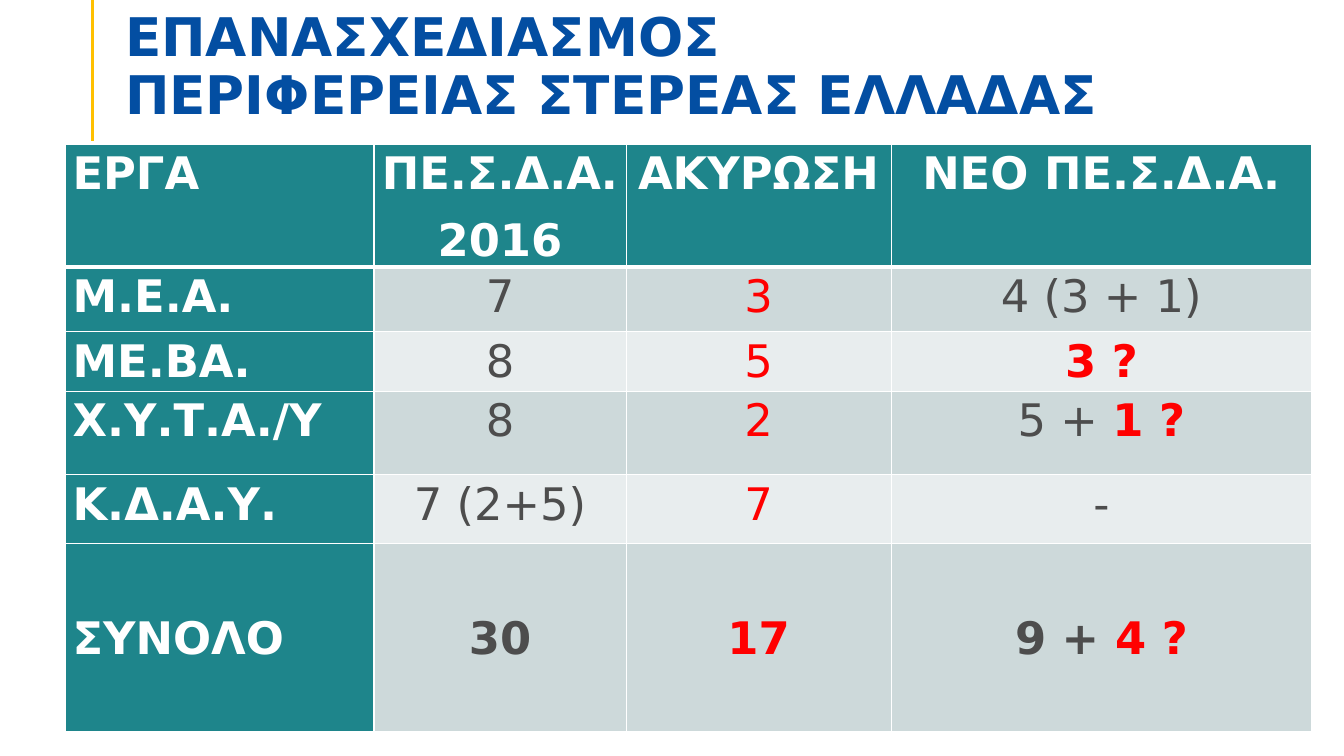
from lxml import etree
from pptx import Presentation
from pptx.dml.color import RGBColor
from pptx.enum.shapes import MSO_CONNECTOR
from pptx.enum.text import MSO_ANCHOR, MSO_AUTO_SIZE, PP_ALIGN
from pptx.oxml.ns import qn
from pptx.util import Inches, Pt

STRAIGHT = MSO_CONNECTOR.STRAIGHT
TOP, MIDDLE, BOTTOM = MSO_ANCHOR.TOP, MSO_ANCHOR.MIDDLE, MSO_ANCHOR.BOTTOM
LEFT, CENTER = PP_ALIGN.LEFT, PP_ALIGN.CENTER
NO_AUTOFIT = MSO_AUTO_SIZE.NONE

FONT = "DejaVu Sans"
COLORS = {
    "title": "034EA2", "accent": "FFC000", "teal": "1E858B",
    "band_dark": "CDD9DA", "band_light": "E8EDEE",
    "white": "FFFFFF", "grey": "4D4D4D", "red": "FF0000",
}
# Run styles: colour and bold
STYLES = {
    "head": ("white", True),
    "plain": ("grey", False), "total": ("grey", True),
    "cut": ("red", False), "open": ("red", True),
}

COL_WIDTHS = [3.06, 2.5, 2.63, 4.17]
ROW_HEIGHTS = [1.19, 0.64, 0.59, 0.83, 0.68, 1.87]
HEADERS = ["ΕΡΓΑ", "ΠΕ.Σ.Δ.Α.\n2016", "ΑΚΥΡΩΣΗ", "ΝΕΟ ΠΕ.Σ.Δ.Α."]
# Label, then one list of (text, style) runs for each value column
PROJECTS = [
    ("Μ.Ε.Α.", [("7", "plain")], [("3", "cut")], [("4 (3 + 1)", "plain")]),
    ("ΜΕ.ΒΑ.", [("8", "plain")], [("5", "cut")], [("3 ?", "open")]),
    ("Χ.Υ.Τ.Α./Υ", [("8", "plain")], [("2", "cut")],
     [("5 + ", "plain"), ("1 ?", "open")]),
    ("Κ.Δ.Α.Υ.", [("7 (2+5)", "plain")], [("7", "cut")], [("-", "plain")]),
    ("ΣΥΝΟΛΟ", [("30", "total")], [("17", "open")],
     [("9 + ", "total"), ("4 ?", "open")]),
]


def rgb(name):
    return RGBColor.from_string(COLORS[name])


def add_run(p, text, size, color, bold):
    r = p.add_run()
    r.text = text
    r.font.name = FONT
    r.font.size = Pt(size)
    r.font.bold = bold
    r.font.color.rgb = rgb(color)


def add_title(s, lines, x, y, w, h):
    title = s.shapes.title
    title.left, title.top, title.width, title.height = map(Inches, (x, y, w, h))
    tf = title.text_frame
    tf.word_wrap = True
    tf.auto_size = NO_AUTOFIT
    tf.vertical_anchor = BOTTOM
    tf.margin_left = tf.margin_right = Inches(0.1)
    tf.margin_top, tf.margin_bottom = Inches(0.05), 0
    p = tf.paragraphs[0]
    p.alignment = LEFT
    p.line_spacing = 0.9
    for i, line in enumerate(lines):
        if i:
            p.add_line_break()
        add_run(p, line, 38, "title", True)


def add_accent_line(s, x, y, h):
    line = s.shapes.add_connector(
        STRAIGHT, Inches(x), Inches(y), Inches(x), Inches(y + h))
    line.line.color.rgb = rgb("accent")
    line.line.width = Pt(2.25)
    etree.SubElement(line._element.spPr, qn("a:effectLst"))


def set_borders(cell, top, bottom):
    """Draw white borders; call before the cell gets its fill."""
    tc_pr = cell._tc.get_or_add_tcPr()
    for side, width in (("L", 1), ("R", 1), ("T", top), ("B", bottom)):
        ln = etree.SubElement(tc_pr, qn("a:ln" + side), w=str(Pt(width)))
        fill = etree.SubElement(ln, qn("a:solidFill"))
        etree.SubElement(fill, qn("a:srgbClr"), val=COLORS["white"])


def fill_cell(cell, paragraphs, fill, align, anchor):
    cell.fill.solid()
    cell.fill.fore_color.rgb = rgb(fill)
    cell.vertical_anchor = anchor
    cell.margin_left = cell.margin_right = Inches(0.07)
    cell.margin_top = cell.margin_bottom = 0
    tf = cell.text_frame
    for i, runs in enumerate(paragraphs):
        p = tf.add_paragraph() if i else tf.paragraphs[0]
        p.alignment = align
        p.line_spacing = 1.07
        p.space_after = Pt(8)
        for text, style in runs:
            add_run(p, text, 32, *STYLES[style])


def add_projects_table(s, x, y):
    rows = [[[[(line, "head")] for line in h.split("\n")] for h in HEADERS]]
    for label, *values in PROJECTS:
        rows.append([[[(label, "head")]]] + [[runs] for runs in values])
    table = s.shapes.add_table(
        len(rows), len(COL_WIDTHS), Inches(x), Inches(y),
        Inches(sum(COL_WIDTHS)), Inches(sum(ROW_HEIGHTS))).table
    for column, width in zip(table.columns, COL_WIDTHS):
        column.width = Inches(width)
    for row, height in zip(table.rows, ROW_HEIGHTS):
        row.height = Inches(height)
    for i, row in enumerate(rows):
        band = "band_dark" if i % 2 else "band_light"
        anchor = MIDDLE if i == len(rows) - 1 else TOP
        for j, paragraphs in enumerate(row):
            cell = table.cell(i, j)
            set_borders(cell, 3 if i == 1 else 1, 3 if i == 0 else 1)
            fill_cell(cell, paragraphs, "teal" if i == 0 or j == 0 else band,
                      CENTER if j else LEFT, anchor)


def main():
    prs = Presentation()
    prs.slide_width, prs.slide_height = Inches(13.33), Inches(7.5)
    s = prs.slides.add_slide(prs.slide_layouts[5])
    add_accent_line(s, 0.92, 0, 1.4)
    add_title(s, ["ΕΠΑΝΑΣΧΕΔΙΑΣΜΟΣ", "ΠΕΡΙΦΕΡΕΙΑΣ ΣΤΕΡΕΑΣ ΕΛΛΑΔΑΣ"],
              1.14, 0.11, 11.65, 1.14)
    add_projects_table(s, 0.65, 1.43)
    prs.save("out.pptx")


if __name__ == "__main__":
    main()
